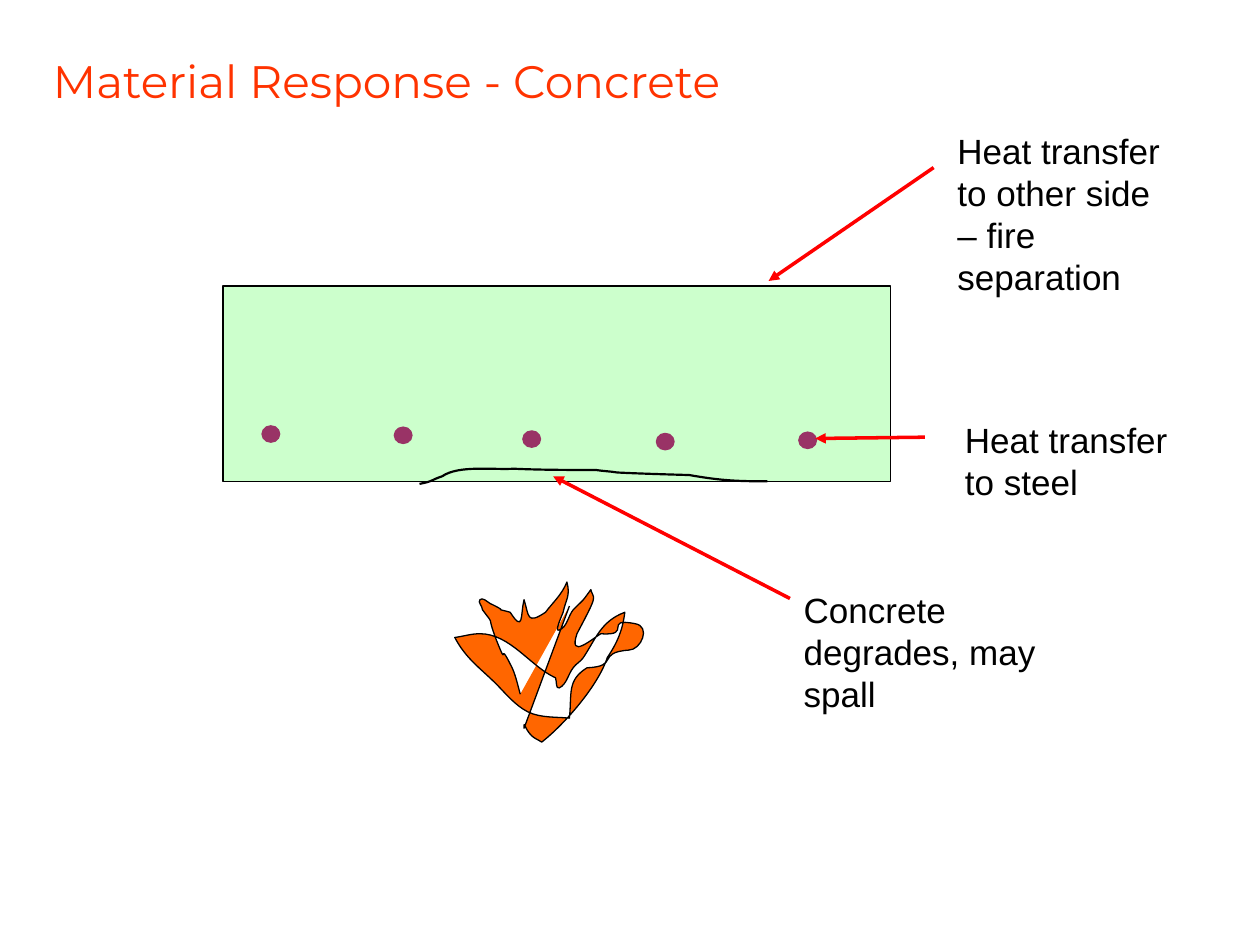
from lxml import etree
from pptx import Presentation
from pptx import util as u
from pptx.dml.color import RGBColor
from pptx.enum import shapes, text
from pptx.oxml.ns import qn

PX = u.Inches(1) // 100
BLACK, RED = "000000", "FF0000"

TITLE = ("Material Response - Concrete", (42, 42, 916, 43))
SLAB = (177, 227, 530, 155)
BAR_SIZE = (14, 13)
STEEL_BARS = [(208, 338), (313, 339), (415, 342), (521, 344), (634, 343)]
LABELS = [
    ("Heat transfer to steel", (756, 327, 182, 77)),
    ("Concrete degrades, may spall", (628, 462, 249, 110)),
    ("Heat transfer to other side – fire separation", (750, 98, 182, 143)),
]
ARROWS = [
    ((627, 475), (439, 378)),
    ((734, 347), (647, 348)),
    ((741, 133), (610, 223)),
]
FLAME_START = (413, 551)
FLAME_SEGMENTS = [
    (411, 544, 409, 534, 405, 527), (395, 507, 404, 533, 394, 508),
    (385, 484, 394, 499, 383, 484), (383, 481, 379, 478, 381, 476),
    (383, 474, 386, 477, 389, 479), (408, 488, 387, 481, 405, 486),
    (416, 503, 413, 488, 416, 476), (420, 489, 418, 496, 433, 486),
    (439, 478, 446, 472, 450, 462), (453, 473, 449, 476, 447, 486),
    (445, 491, 440, 502, 444, 500), (450, 498, 451, 489, 455, 484),
    (465, 474, 461, 479, 469, 468), (469, 470, 472, 473, 471, 476),
    (471, 479, 460, 499, 458, 503), (451, 524, 470, 507, 477, 503),
    (503, 505, 478, 490, 504, 495), (517, 497, 509, 516, 499, 516),
    (473, 518, 492, 529, 466, 530), (450, 540, 454, 550, 452, 570),
    (443, 569, 429, 570, 419, 565), (409, 560, 401, 550, 394, 543),
    (381, 530, 370, 523, 361, 506), (368, 505, 374, 503, 381, 503),
    (405, 503, 421, 529, 441, 538), (442, 541, 441, 547, 444, 546),
    (450, 543, 451, 535, 455, 530), (457, 527, 461, 525, 463, 522),
    (473, 507, 477, 493, 496, 486), (494, 501, 490, 510, 482, 522),
    (475, 544, 448, 575, 430, 589), (427, 587, 424, 586, 422, 584),
    (416, 578, 416, 571, 416, 578), (452, 481),
]
SPALL_START = (333, 384)
SPALL_SEGMENTS = [
    (344, 382, 342, 381, 351, 378), (364, 369, 391, 373, 408, 372),
    (430, 373, 452, 373, 473, 373), (479, 374, 484, 374, 490, 375),
    (509, 376, 547, 377, 547, 377), (570, 381, 582, 382, 609, 382),
]


def color(value):
    return RGBColor.from_string(value)


def emu(lengths):
    return [length * PX for length in lengths]


def style(shape, fill, line, width):
    shape.shadow.inherit = False
    if fill:
        shape.fill.solid()
        shape.fill.fore_color.rgb = color(fill)
    else:
        shape.fill.background()
    shape.line.color.rgb = color(line)
    shape.line.width = u.Pt(width)


def add_preset(slide, kind, box, fill, line):
    style(slide.shapes.add_shape(kind, *emu(box)), fill, line, 0.75)


def add_text(slide, words, box, font_name, size, font_color):
    shape = slide.shapes.add_textbox(*emu(box))
    frame = shape.text_frame
    frame.word_wrap = True
    frame.auto_size = text.MSO_AUTO_SIZE.SHAPE_TO_FIT_TEXT
    run = frame.paragraphs[0].add_run()
    run.text = words
    run.font.name = font_name
    run.font.size = u.Pt(size)
    run.font.color.rgb = color(font_color)
    return frame


def add_outline(slide, start, segments, fill, width):
    builder = slide.shapes.build_freeform(*emu(start))
    builder.add_line_segments([emu(segment[-2:]) for segment in segments], close=False)
    shape = builder.convert_to_shape()
    style(shape, fill, BLACK, width)
    steps = list(shape._element.iter(qn("a:lnTo")))
    for step, segment in zip(steps, segments):
        if len(segment) == 2:
            continue
        step.tag = qn("a:cubicBezTo")
        curve = etree.Element(qn("a:cubicBezTo"))
        for x, y in zip(emu(segment[::2]), emu(segment[1::2])):
            etree.SubElement(curve, qn("a:pt"), x=str(x - shape.left), y=str(y - shape.top))
        step.getparent().replace(step, curve)


def add_arrow(slide, start, end):
    arrow = slide.shapes.add_connector(shapes.MSO_CONNECTOR.STRAIGHT, *emu(start + end))
    arrow.line.color.rgb = color(RED)
    arrow.line.width = u.Pt(2)
    etree.SubElement(arrow.line._get_or_add_ln(), qn("a:tailEnd"), type="triangle")
    etree.SubElement(arrow._element.spPr, qn("a:effectLst"))


def main():
    """Build the slide on how concrete responds to fire."""
    presentation = Presentation()
    presentation.slide_width, presentation.slide_height = emu((1000, 750))
    slide = presentation.slides.add_slide(presentation.slide_layouts[6])

    title = add_text(slide, *TITLE, "Montserrat", 26, "FF3300")
    title.vertical_anchor = text.MSO_ANCHOR.MIDDLE
    title.margin_left = title.margin_right = title.margin_top = title.margin_bottom = 0

    add_preset(slide, shapes.MSO_SHAPE.RECTANGLE, SLAB, "CCFFCC", BLACK)
    for position in STEEL_BARS:
        add_preset(slide, shapes.MSO_SHAPE.OVAL, position + BAR_SIZE, "993366", "993366")
    add_outline(slide, FLAME_START, FLAME_SEGMENTS, "FF6600", 0.75)
    add_text(slide, *LABELS[0], "Arial", 20, BLACK)
    add_text(slide, *LABELS[1], "Arial", 20, BLACK)
    add_outline(slide, SPALL_START, SPALL_SEGMENTS, None, 1.25)
    add_text(slide, *LABELS[2], "Arial", 20, BLACK)
    for start, end in ARROWS:
        add_arrow(slide, start, end)

    presentation.save("out.pptx")


if __name__ == "__main__":
    main()
